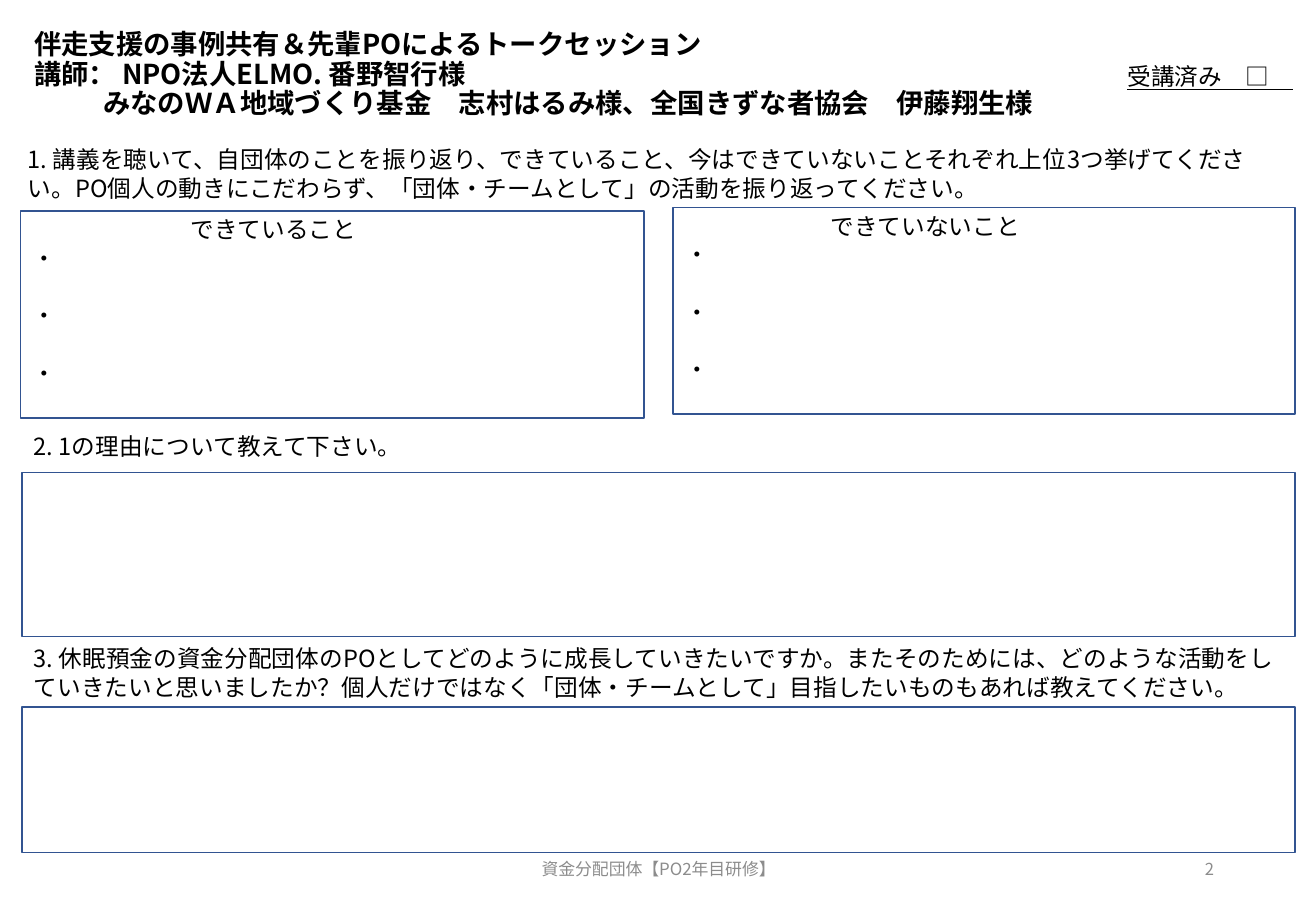
from lxml.etree import SubElement
from pptx import Presentation
from pptx.dml.color import RGBColor
from pptx.enum.shapes import MSO_SHAPE as Shape
from pptx.enum.text import MSO_ANCHOR as Anchor, MSO_AUTO_SIZE as AutoSize, PP_ALIGN as Align
from pptx.oxml.ns import qn
from pptx.util import Inches, Pt

BLACK = RGBColor(0x00, 0x00, 0x00)
WHITE = RGBColor(0xFF, 0xFF, 0xFF)
BLUE = RGBColor(0x32, 0x54, 0x91)
GREY = RGBColor(0x8C, 0x8C, 0x8C)
FONT = "Noto Sans CJK JP"
BODY_SIZE = 14
INSET = 0.1
LEFT, WIDTH = 0.18, 10.48

TITLE_LINES = [
    "伴走支援の事例共有＆先輩POによるトークセッション",
    "講師： NPO法人ELMO. 番野智行様",
    "みなのＷＡ地域づくり基金\u3000志村はるみ様、全国きずな者協会\u3000伊藤翔生様",
]
QUESTIONS = [
    ((0.13, 1.14, 10.39, 0.57),
     "1. 講義を聴いて、自団体のことを振り返り、できていること、今はできていないことそれぞれ上位3つ挙げてください。"
     "PO個人の動きにこだわらず、「団体・チームとして」の活動を振り返ってください。"),
    ((LEFT, 3.5, WIDTH, 0.34), "2. 1の理由について教えて下さい。"),
    ((LEFT, 5.25, WIDTH, 0.57),
     "3. 休眠預金の資金分配団体のPOとしてどのように成長していきたいですか。またそのためには、どのような活動を"
     "していきたいと思いましたか？個人だけではなく「団体・チームとして」目指したいものもあれば教えてください。"),
]
LIST_BOXES = [((0.17, 1.74, 5.13, 1.7), "できていること"),
              ((5.54, 1.71, 5.12, 1.7), "できていないこと")]
ANSWER_BOXES = [(LEFT, 3.89, WIDTH, 1.35), (LEFT, 5.82, WIDTH, 1.2)]


def format_paragraph(paragraph, size=BODY_SIZE, color=BLACK, line=17, align=Align.LEFT,
                     bold=False, underline=False, indent=0):
    paragraph.alignment = align
    paragraph.line_spacing = Pt(line)
    paragraph.space_before = Pt(0)
    properties = paragraph._p.get_or_add_pPr()
    properties.set("marL", str(Inches(indent)))
    properties.set("indent", "0")
    for run in paragraph.runs:
        font = run.font
        font.name, font.size, font.bold = FONT, Pt(size), bold
        font.underline = underline
        font.color.rgb = color
        SubElement(font._element, qn("a:ea")).set("typeface", FONT)


def add_text(slide, box, text, anchor=Anchor.TOP, **formatting):
    text_frame = slide.shapes.add_textbox(*map(Inches, box)).text_frame
    text_frame.word_wrap = True
    text_frame.vertical_anchor = anchor
    text_frame.text = text
    format_paragraph(text_frame.paragraphs[0], **formatting)


def add_title(slide, box):
    title = slide.shapes.title
    title.left, title.top, title.width, title.height = map(Inches, box)
    text_frame = title.text_frame
    text_frame.auto_size = AutoSize.NONE
    text_frame.word_wrap = True
    text_frame.vertical_anchor = Anchor.MIDDLE
    text_frame.margin_left = text_frame.margin_right = Inches(INSET)
    text_frame.margin_top, text_frame.margin_bottom = Inches(0), Inches(0.31)
    text_frame.text = "\n".join(TITLE_LINES)
    for paragraph, indent in zip(text_frame.paragraphs, (0, 0, 0.57)):
        format_paragraph(paragraph, size=16.2, line=17.5, bold=True, indent=indent)


def add_answer_box(slide, box):
    shape = slide.shapes.add_shape(Shape.RECTANGLE, *map(Inches, box))
    shape.shadow.inherit = False
    shape.fill.solid()
    shape.fill.fore_color.rgb = WHITE
    shape.line.color.rgb = BLUE
    shape.line.width = Pt(1)
    return shape


def add_list_box(slide, box, heading):
    """Answer box with a heading left of centre and three points to fill in."""
    text_frame = add_answer_box(slide, box).text_frame
    text_frame.word_wrap = True
    text_frame.vertical_anchor = Anchor.TOP
    text_frame.margin_top = Inches(0.03)
    text_frame.text = "\n".join([heading] + ["・"] * 3)
    heading_width = len(heading) * BODY_SIZE / 72
    heading_shift = 5 * BODY_SIZE / 72
    indent = (box[2] - 2 * INSET - heading_shift - heading_width) / 2
    first, *points = text_frame.paragraphs
    format_paragraph(first, indent=indent)
    for index, point in enumerate(points):
        format_paragraph(point)
        point.space_before = Pt(17 if index else 0)


def add_footer(slide, top, height):
    add_text(slide, (3.59, top, 3.66, height), "資金分配団体【PO2年目研修】", Anchor.MIDDLE,
             size=10, color=GREY, line=12, align=Align.CENTER)
    add_text(slide, (7.65, top, 2.44, height), "2", Anchor.MIDDLE,
             size=9.8, color=GREY, line=12, align=Align.RIGHT)


def main():
    presentation = Presentation()
    presentation.slide_width, presentation.slide_height = Inches(10.83), Inches(7.5)
    slide = presentation.slides.add_slide(presentation.slide_layouts[5])
    add_title(slide, (LEFT, 0.34, 9.34, 0.86))
    add_text(slide, (9.18, 0.46, 1.62, 0.34), "受講済み\u3000□\u3000", underline=True)
    for box, question in QUESTIONS:
        add_text(slide, box, question)
    for box, heading in LIST_BOXES:
        add_list_box(slide, box, heading)
    for box in ANSWER_BOXES:
        add_answer_box(slide, box)
    add_footer(slide, 6.95, 0.4)
    presentation.save("out.pptx")


if __name__ == "__main__":
    main()
